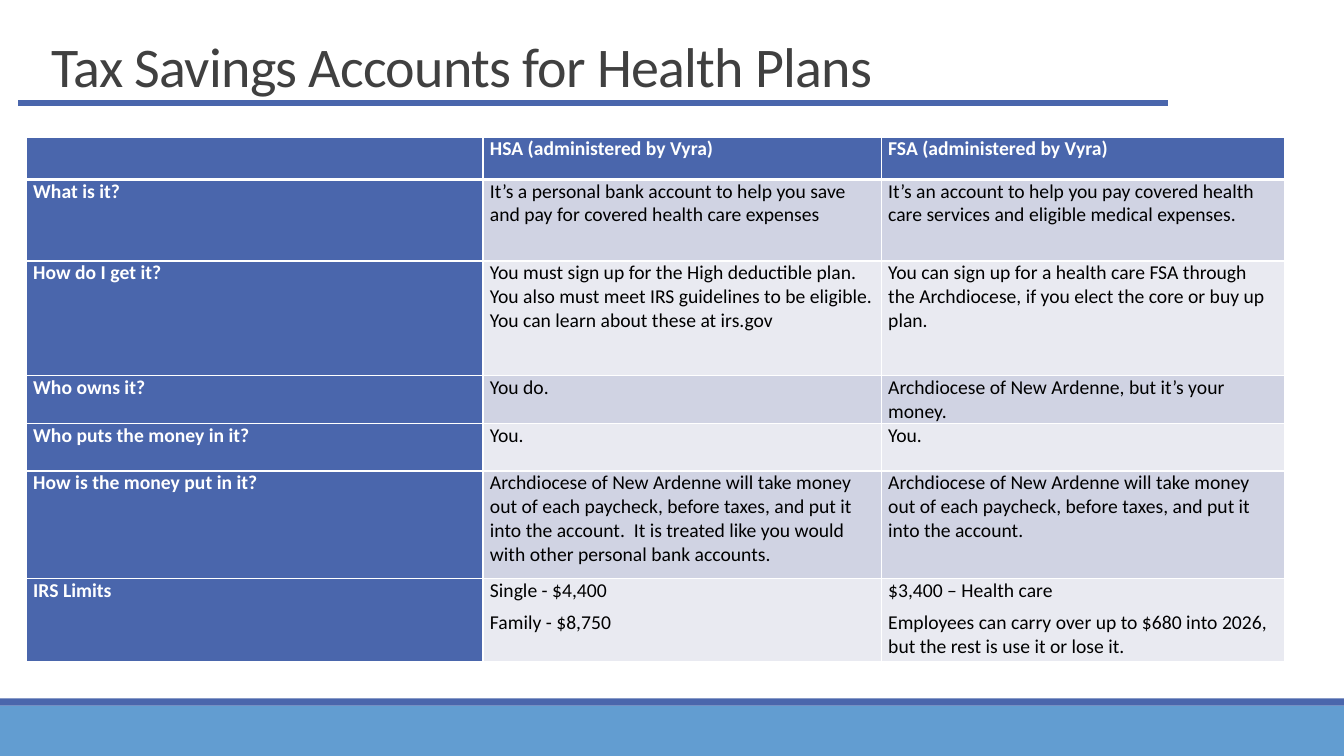
from lxml.etree import SubElement
from pptx import Presentation
from pptx.dml.color import RGBColor
from pptx.enum.shapes import MSO_CONNECTOR, MSO_SHAPE
from pptx.enum.text import MSO_ANCHOR, MSO_AUTO_SIZE, PP_ALIGN
from pptx.oxml.ns import qn
from pptx.util import Inches, Pt

COLORS = {
    "navy": "4A66AC",
    "sky": "629DD1",
    "title": "404040",
    "text": "000000",
    "white": "FFFFFF",
    "band_dark": "D0D3E3",
    "band_light": "E9EAF1",
}
FONT = "Calibri"
COLUMN_WIDTHS = [4.53, 3.95, 4]
ROW_HEIGHTS = [0.42, 0.81, 1.14, 0.47, 0.47, 1.07, 0.82]
ACCOUNT_ROWS = [
    ["", "HSA (administered by Vyra)", "FSA (administered by Vyra)"],
    ["What is it?",
     "It’s a personal bank account to help you save and pay for covered health care expenses",
     "It’s an account to help you pay covered health care services and eligible medical expenses."],
    ["How do I get it?",
     "You must sign up for the High deductible plan. You also must meet IRS guidelines "
     "to be eligible. You can learn about these at irs.gov",
     "You can sign up for a health care FSA through the Archdiocese, "
     "if you elect the core or buy up plan."],
    ["Who owns it?", "You do.", "Archdiocese of New Ardenne, but it’s your money."],
    ["Who puts the money in it?", "You.", "You."],
    ["How is the money put in it?",
     "Archdiocese of New Ardenne will take money out of each paycheck, before taxes, "
     "and put it into the account.  It is treated like you would with other personal bank accounts.",
     "Archdiocese of New Ardenne will take money out of each paycheck, before taxes, "
     "and put it into the account."],
    ["IRS Limits",
     "Single - $4,400\nFamily - $8,750",
     "$3,400 – Health care\n"
     "Employees can carry over up to $680 into 2026, but the rest is use it or lose it."],
]


def color(name):
    return RGBColor.from_string(COLORS[name])


def add_bar(page, left, top, width, height, fill):
    bar = page.shapes.add_shape(
        MSO_SHAPE.RECTANGLE, Inches(left), Inches(top), Inches(width), Inches(height))
    bar.shadow.inherit = False
    bar.fill.solid()
    bar.fill.fore_color.rgb = color(fill)
    bar.line.fill.background()


def add_footer(page, left, top, width, height):
    stripe = 0.07
    add_bar(page, left, top + stripe, width, height - stripe, "sky")
    add_bar(page, left, top, width, stripe, "navy")


def add_heading(page, left, top, width, height, text):
    title = page.shapes.title
    title.left, title.top = Inches(left), Inches(top)
    title.width, title.height = Inches(width), Inches(height)
    frame = title.text_frame
    frame.text = text
    frame.auto_size = MSO_AUTO_SIZE.NONE
    frame.vertical_anchor = MSO_ANCHOR.BOTTOM
    para = frame.paragraphs[0]
    para.alignment = PP_ALIGN.LEFT
    para.line_spacing = 0.85
    para.font.name = FONT
    para.font.size = Pt(40)
    para.font.color.rgb = color("title")
    para.runs[0]._r.get_or_add_rPr().set("spc", "-50")

    line_left, line_top = left - 0.23, top + height - 0.01
    rule = page.shapes.add_connector(
        MSO_CONNECTOR.STRAIGHT, Inches(line_left), Inches(line_top),
        Inches(line_left + 11.4), Inches(line_top))
    rule.line.color.rgb = color("navy")
    rule.line.width = Pt(4)
    SubElement(rule._element.spPr, qn("a:effectLst"))


def set_borders(cell, widths):
    properties = cell._tc.get_or_add_tcPr()
    for side, width in widths.items():
        border = SubElement(properties, qn(f"a:ln{side}"), w=str(Pt(width)))
        fill = SubElement(border, qn("a:solidFill"))
        SubElement(fill, qn("a:srgbClr"), val=COLORS["white"])


def fill_cell(cell, text, row, column):
    is_header = row == 0 or column == 0
    set_borders(cell, {"L": 1, "R": 1, "T": 3 if row == 1 else 1, "B": 3 if row == 0 else 1})
    cell.fill.solid()
    band = "band_dark" if row % 2 else "band_light"
    cell.fill.fore_color.rgb = color("navy" if is_header else band)
    cell.margin_left = cell.margin_right = Inches(0.07)
    cell.margin_top = cell.margin_bottom = 0
    cell.text = text
    for para in cell.text_frame.paragraphs:
        para.space_before = para.space_after = Pt(3)
        para.font.name = FONT
        para.font.size = Pt(14)
        para.font.bold = is_header
        para.font.color.rgb = color("white" if is_header else "text")


def add_account_table(page, left, top):
    frame = page.shapes.add_table(
        len(ROW_HEIGHTS), len(COLUMN_WIDTHS), Inches(left), Inches(top),
        Inches(sum(COLUMN_WIDTHS)), Inches(sum(ROW_HEIGHTS)))
    table = frame.table
    table.first_col = True
    for column, width in zip(table.columns, COLUMN_WIDTHS):
        column.width = Inches(width)
    for row, height in zip(table.rows, ROW_HEIGHTS):
        row.height = Inches(height)
    for row, texts in enumerate(ACCOUNT_ROWS):
        for column, text in enumerate(texts):
            fill_cell(table.cell(row, column), text, row, column)


def main():
    deck = Presentation()
    deck.slide_width, deck.slide_height = Inches(13.33), Inches(7.5)
    page = deck.slides.add_slide(deck.slide_layouts[5])
    add_footer(page, 0, 6.93, 13.33, 0.57)
    add_heading(page, 0.41, 0.39, 12.92, 0.64, "Tax Savings Accounts for Health Plans")
    add_account_table(page, 0.26, 1.36)
    deck.save("out.pptx")


if __name__ == "__main__":
    main()
